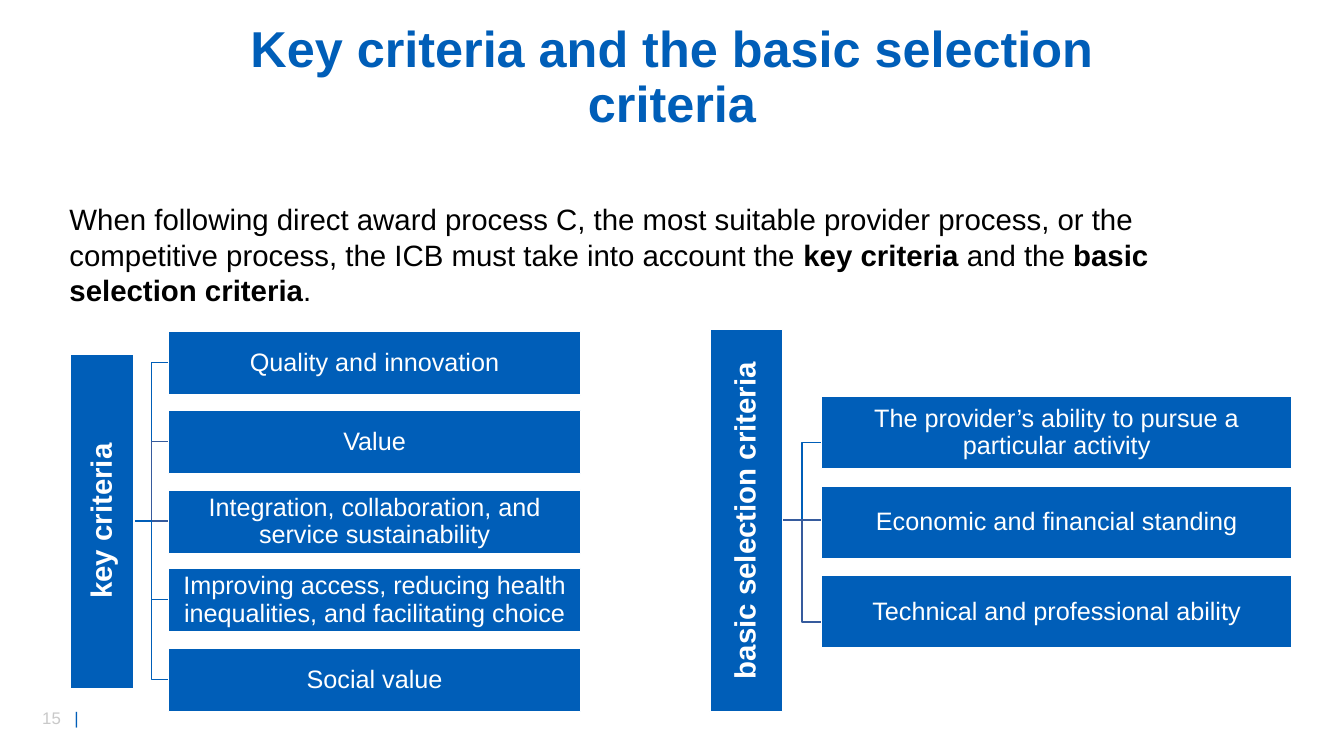
from dataclasses import dataclass

from lxml import etree
from pptx import Presentation
from pptx.dml.color import RGBColor
from pptx.enum import shapes, text
from pptx.oxml import ns
from pptx.util import Pt

EMU_PER_PX = 9144  # 100 px to the inch


@dataclass(frozen=True)
class Theme:
    font: str = "Arial"
    blue: str = "005EB8"
    link_blue: str = "365B9D"
    white: str = "FFFFFF"
    black: str = "000000"
    grey: str = "C9C9C9"
    title: int = 36
    body: int = 21
    box: int = 18
    number: int = 12
    line: int = 1
    tight: float = 0.9


THEME = Theme()

KEY_CRITERIA = {
    "label": "key criteria",
    "bar": (70, 351, 63, 332),
    "column": (167, 409, 63),
    "tops": [329 + step * 157 // 2 for step in range(5)],
    "link_drop": 0,
    "link_colors": [THEME.blue, THEME.link_blue, THEME.link_blue, THEME.blue, THEME.blue],
    "items": [
        "Quality and innovation",
        "Value",
        "Integration, collaboration, and service sustainability",
        "Improving access, reducing health inequalities, and facilitating choice",
        "Social value",
    ],
}

BASIC_CRITERIA = {
    "label": "basic selection criteria",
    "bar": (704, 327, 72, 379),
    "column": (815, 466, 72),
    "tops": [393 + step * 89 for step in range(3)],
    "link_drop": 10,
    "link_colors": [THEME.blue, THEME.link_blue, THEME.link_blue],
    "items": [
        "The provider’s ability to pursue a particular activity",
        "Economic and financial standing",
        "Technical and professional ability",
    ],
}


def px(*lengths):
    return [round(length * EMU_PER_PX) for length in lengths]


def apply(target, values):
    for name, value in values.items():
        setattr(target, name, value)


def write(shape, runs, size, align=text.PP_ALIGN.LEFT, spacing=None,
          anchor=text.MSO_ANCHOR.TOP, inset=None):
    """Fill a shape with one paragraph; runs are (wording, color, bold)."""
    frame = shape.text_frame
    apply(frame, {"word_wrap": True, "vertical_anchor": anchor})
    if inset is not None:
        margin = px(inset)[0]
        sides = ("left", "top", "right", "bottom")
        apply(frame, {f"margin_{side}": margin for side in sides})
    paragraph = frame.paragraphs[0]
    apply(paragraph, {"alignment": align, "line_spacing": spacing})
    for wording, color, bold in runs:
        run = paragraph.add_run()
        run.text = wording
        apply(run.font, {"name": THEME.font, "size": Pt(size), "bold": bold})
        run.font.color.rgb = RGBColor.from_string(color)
    return paragraph


def add_text(slide, place, runs, size, **layout):
    return write(slide.shapes.add_textbox(*px(*place)), runs, size, **layout)


def add_box(slide, place, label, size, bold=False, rotation=0):
    shape = slide.shapes.add_shape(shapes.MSO_SHAPE.RECTANGLE, *px(*place))
    apply(shape, {"rotation": rotation})
    shape.shadow.inherit = False
    shape.fill.solid()
    shape.fill.fore_color.rgb = RGBColor.from_string(THEME.blue)
    shape.line.color.rgb = RGBColor.from_string(THEME.white)
    shape.line.width = Pt(THEME.line)
    write(shape, [(label, THEME.white, bold)], size, inset=1, spacing=THEME.tight,
          align=text.PP_ALIGN.CENTER, anchor=text.MSO_ANCHOR.MIDDLE)


def add_bar(slide, place, label):
    """Upright bar whose text reads from bottom to top."""
    left, top, width, height = place
    shift = (height - width) / 2
    add_box(slide, (left - shift, top + shift, height, width), label,
            THEME.body, bold=True, rotation=270)


def add_link(slide, start, end, color):
    straight = start[1] == end[1]
    kind = shapes.MSO_CONNECTOR.STRAIGHT if straight else shapes.MSO_CONNECTOR.ELBOW
    link = slide.shapes.add_connector(kind, *px(*start, *end))
    link.line.color.rgb = RGBColor.from_string(color)
    link.line.width = Pt(THEME.line)
    properties = link._element.find(ns.qn("p:spPr"))
    etree.SubElement(properties, ns.qn("a:effectLst"))


def add_criteria_tree(slide, tree):
    left, top, width, height = tree["bar"]
    column_left, box_width, box_height = tree["column"]
    root = (left + width, top + height // 2)
    middle = len(tree["tops"]) // 2

    # Links sit behind the bar and boxes
    for index, box_top in enumerate(tree["tops"]):
        level = box_top + box_height // 2 + tree["link_drop"]
        end_y = root[1] if index == middle else level
        add_link(slide, root, (column_left, end_y), tree["link_colors"][index])

    add_bar(slide, tree["bar"], tree["label"])
    for box_top, item in zip(tree["tops"], tree["items"]):
        add_box(slide, (column_left, box_top, box_width, box_height), item, THEME.box)


def add_slide_number(slide):
    paragraph = add_text(slide, (32, 697, 71, 30),
                         [("15", THEME.grey, False), ("\t|", THEME.blue, False)],
                         THEME.number)
    tabs = etree.SubElement(paragraph._p.get_or_add_pPr(), ns.qn("a:tabLst"))
    etree.SubElement(tabs, ns.qn("a:tab"), pos=str(px(32)[0]), algn="l")


def main():
    presentation = Presentation()
    slide_width, slide_height = px(1333, 750)
    apply(presentation, {"slide_width": slide_width, "slide_height": slide_height})
    slide = presentation.slides.add_slide(presentation.slide_layouts[6])

    # Slide number, title and introduction
    add_slide_number(slide)
    add_text(slide, (222, 27, 889, 102),
             [("Key criteria and the basic selection criteria", THEME.blue, True)],
             THEME.title, align=text.PP_ALIGN.CENTER, spacing=THEME.tight,
             anchor=text.MSO_ANCHOR.MIDDLE)
    add_text(slide, (59, 195, 1215, 116), [
        ("When following direct award process C, the most suitable provider process, "
         "or the competitive process, the ICB must take into account the ",
         THEME.black, False),
        ("key criteria", THEME.black, True),
        (" and the ", THEME.black, False),
        ("basic selection criteria", THEME.black, True),
        (".", THEME.black, False),
    ], THEME.body)

    # Criteria diagrams
    for tree in (KEY_CRITERIA, BASIC_CRITERIA):
        add_criteria_tree(slide, tree)

    presentation.save("out.pptx")


if __name__ == "__main__":
    main()
